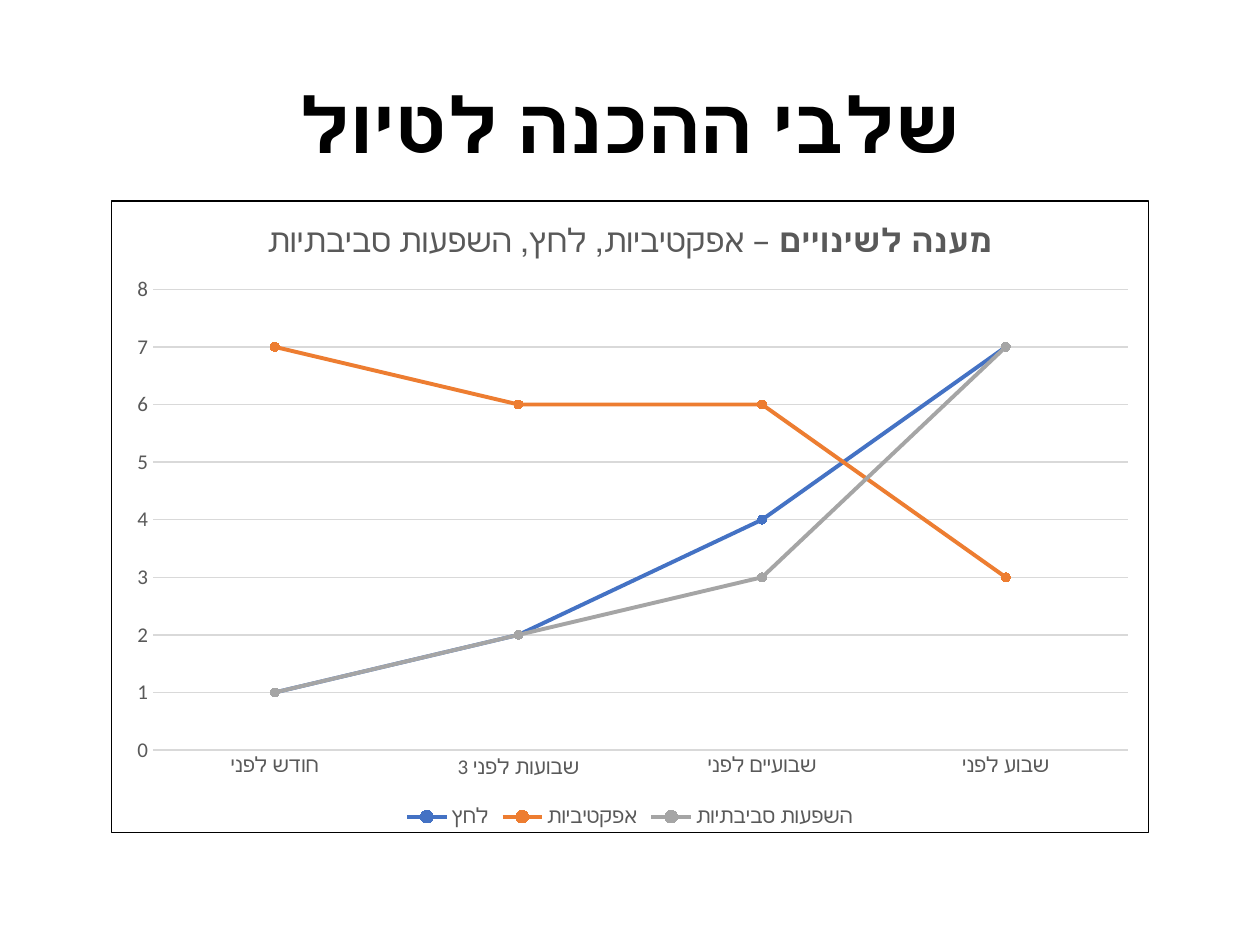
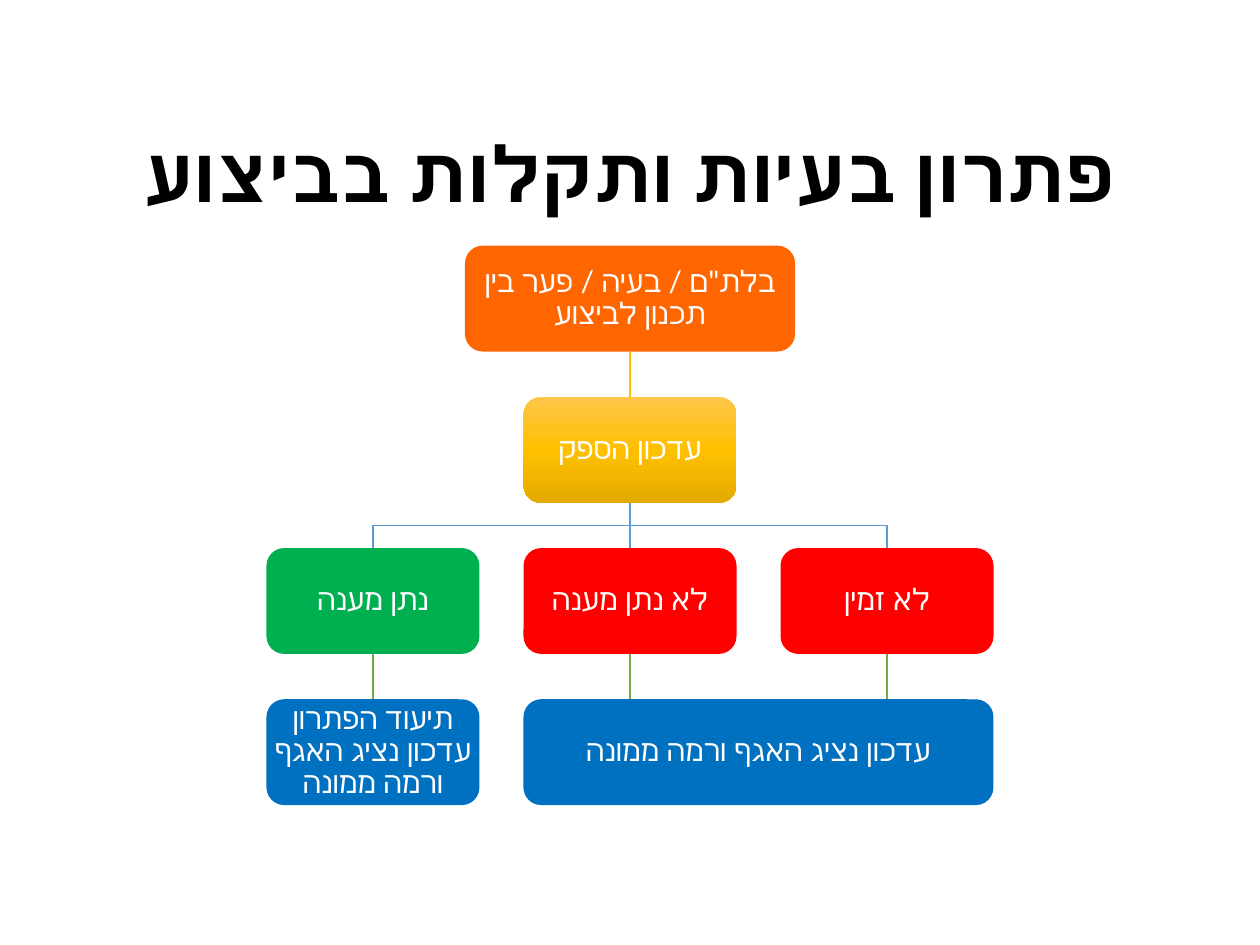
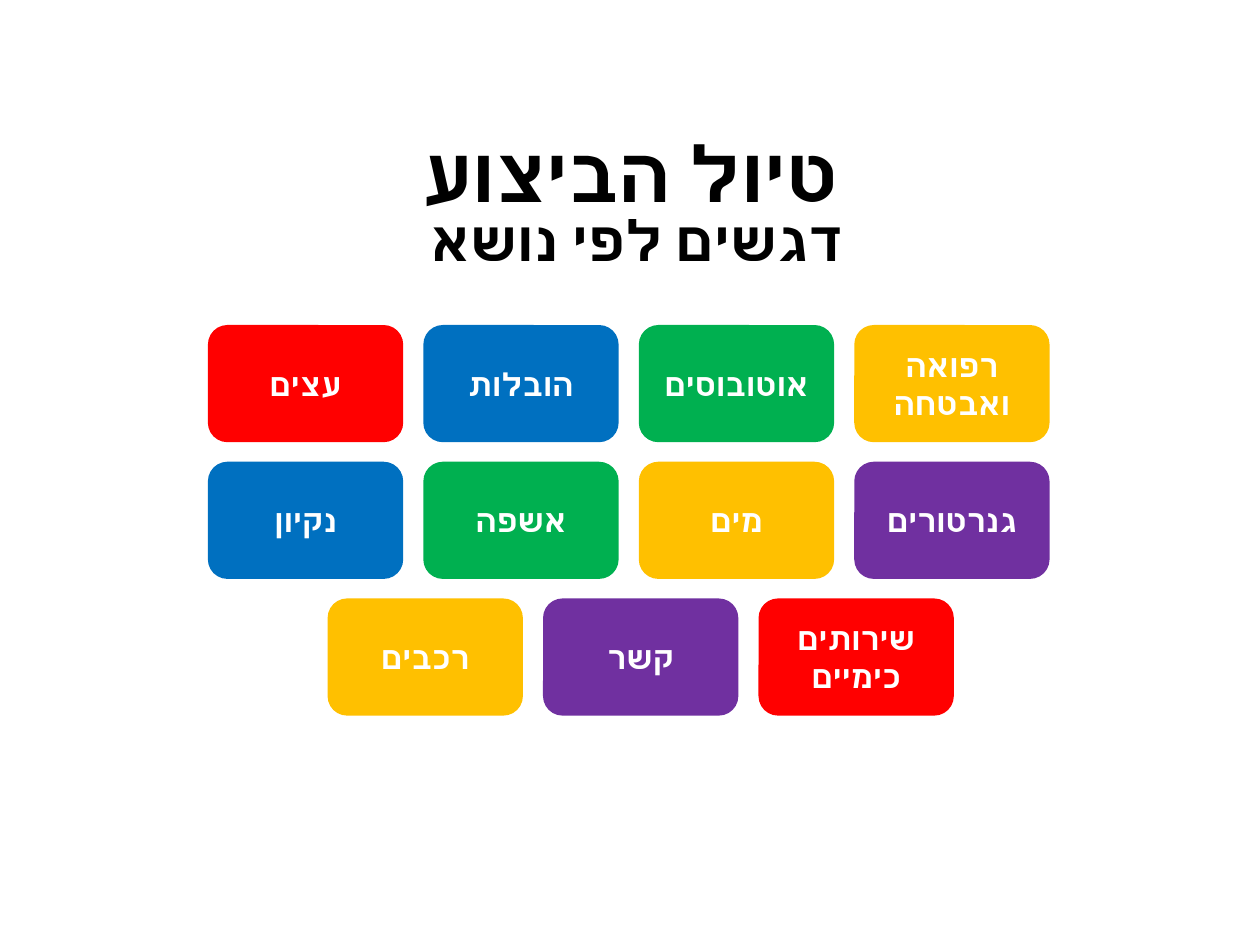
from copy import deepcopy

from lxml.etree import SubElement
from pptx import Presentation
from pptx.chart.data import CategoryChartData
from pptx.dml.color import RGBColor
from pptx.enum.chart import XL_CHART_TYPE as ChartType
from pptx.enum.chart import XL_LEGEND_POSITION as LegendPosition
from pptx.enum.chart import XL_MARKER_STYLE as MarkerStyle
from pptx.enum.chart import XL_TICK_MARK as TickMark
from pptx.enum.shapes import MSO_CONNECTOR as Connector
from pptx.enum.shapes import MSO_SHAPE as Preset
from pptx.enum.text import MSO_ANCHOR as Anchor
from pptx.enum.text import MSO_AUTO_SIZE as AutoSize
from pptx.enum.text import PP_ALIGN as Align
from pptx.oxml import parse_xml
from pptx.oxml.ns import nsdecls, qn
from pptx.util import Inches, Pt

COLORS = {
    "black": "000000", "white": "FFFFFF", "grey": "595959", "grid": "D9D9D9",
    "red": "FF0000", "blue": "0070C0", "green": "00B050", "gold": "FFC000",
    "light_gold": "FFC64B", "dark_gold": "E3AB00", "purple": "7030A0", "orange": "FF6600",
    "branch": "5B9BD5", "leaf": "70AD47",
    "stress": "4472C4", "effectiveness": "ED7D31", "environment": "A5A5A5",
}
FONT, CHART_FONT = "Lato", "Calibri"
WIDTH, HEIGHT = 10, 7.5
CENTER = WIDTH / 2

STEP_WIDTH, STEP_HEIGHT = 1.69, 0.84
STEP_PITCH_X, STEP_PITCH_Y, STEP_TOP = 2.04, 1.2, 1.95
TILE_WIDTH, TILE_HEIGHT = 1.55, 0.93
TILE_PITCH_X, TILE_PITCH_Y, TILE_TOP = 1.71, 1.085, 2.58

CATEGORIES = ["חודש לפני", "3 שבועות לפני", "שבועיים לפני", "שבוע לפני"]
SERIES = [
    ("לחץ", (1, 2, 4, 7), "stress"),
    ("אפקטיביות", (7, 6, 6, 3), "effectiveness"),
    ("השפעות סביבתיות", (1, 2, 3, 7), "environment"),
]
STEPS = [
    ("בלת\"ם / בעיה / פער בין תכנון לביצוע", 0, 0, 2.62, "orange"),
    ("עדכון הספק", 0, 1, STEP_WIDTH, "gold"),
    ("נתן מענה", -1, 2, STEP_WIDTH, "green"),
    ("לא נתן מענה", 0, 2, STEP_WIDTH, "red"),
    ("לא זמין", 1, 2, STEP_WIDTH, "red"),
    ("תיעוד הפתרון עדכון נציג האגף ורמה ממונה", -1, 3, STEP_WIDTH, "blue"),
    ("עדכון נציג האגף ורמה ממונה", 0.5, 3, STEP_WIDTH + STEP_PITCH_X, "blue"),
]
TILE_ROWS = [
    (1.65, [("עצים", "red"), ("הובלות", "blue"), ("אוטובוסים", "green"),
            ("רפואה ואבטחה", "gold")]),
    (1.65, [("נקיון", "blue"), ("אשפה", "green"), ("מים", "gold"), ("גנרטורים", "purple")]),
    (2.6, [("רכבים", "gold"), ("קשר", "purple"), ("שירותים כימיים", "red")]),
]


def rgb(name):
    """Return the named colour."""
    return RGBColor.from_string(COLORS[name])


def write(shape, text, size, color, bold=False, align=Align.CENTER, spacing=None):
    """Fill a shape with one right-to-left paragraph."""
    paragraph = shape.text_frame.paragraphs[0]
    paragraph.text = text
    paragraph.alignment = align
    if spacing:
        paragraph.line_spacing = spacing
    font = paragraph.font
    font.name, font.size, font.bold = FONT, Pt(size), bold
    font.color.rgb = rgb(color)
    properties = paragraph._p.get_or_add_pPr()
    properties.set("rtl", "1")
    SubElement(properties.find(qn("a:defRPr")), qn("a:cs"), typeface=FONT)


def add_titled_slide(presentation, title, top, width=9.38, height=1.08):
    """Add a title-only slide with a centred bold title."""
    slide = presentation.slides.add_slide(presentation.slide_layouts[5])
    shape = slide.shapes.title
    shape.left, shape.top = Inches((WIDTH - width) / 2), Inches(top)
    shape.width, shape.height = Inches(width), Inches(height)
    frame = shape.text_frame
    frame.auto_size, frame.word_wrap, frame.vertical_anchor = AutoSize.NONE, True, Anchor.TOP
    write(shape, title, 44, "black", bold=True)
    return slide


def add_box(slide, text, left, top, width, height, fill, size, inset, **style):
    """Add a rounded box with white text."""
    shape = slide.shapes.add_shape(Preset.ROUNDED_RECTANGLE, Inches(left), Inches(top),
                                   Inches(width), Inches(height))
    shape.shadow.inherit = False
    shape.fill.solid()
    shape.fill.fore_color.rgb = rgb(fill)
    shape.line.fill.background()
    frame = shape.text_frame
    frame.word_wrap, frame.vertical_anchor = True, Anchor.MIDDLE
    frame.margin_left = frame.margin_right = Inches(inset)
    frame.margin_top = frame.margin_bottom = Inches(inset)
    write(shape, text, size, "white", **style)
    return shape


def shade(shape, names):
    """Give a shape an even top-to-bottom gradient of three colours."""
    shape.fill.gradient()
    shape.fill.gradient_angle = 270
    stop_list = shape._element.spPr.find(f".//{qn('a:gsLst')}")
    stop_list.append(deepcopy(stop_list[-1]))
    for index, (stop, name) in enumerate(zip(shape.fill.gradient_stops, names)):
        stop.position = index / 2
        stop.color.rgb = rgb(name)


def column_center(column):
    """Return the centre of a flow column."""
    return CENTER + column * STEP_PITCH_X


def row_top(row):
    """Return the top of a flow row."""
    return STEP_TOP + row * STEP_PITCH_Y


def add_drop(slide, column, row, color):
    """Join a step to the one below it with a vertical line."""
    x = Inches(column_center(column))
    line = slide.shapes.add_connector(Connector.STRAIGHT, x, Inches(row_top(row) + STEP_HEIGHT),
                                      x, Inches(row_top(row + 1)))
    line.line.color.rgb, line.line.width = rgb(color), Pt(1)
    SubElement(line._element.spPr, qn("a:effectLst"))


def add_branch(slide, column, row, color):
    """Join the central step to a side step in the next row with an elbow."""
    start, end = row_top(row) + STEP_HEIGHT, row_top(row + 1)
    middle, x = (start + end) / 2, column_center(column)
    builder = slide.shapes.build_freeform(Inches(CENTER), Inches(start))
    points = [(CENTER, middle), (x, middle), (x, end)]
    builder.add_line_segments([(Inches(a), Inches(b)) for a, b in points], close=False)
    shape = builder.convert_to_shape()
    shape.shadow.inherit = False
    shape.fill.background()
    shape.line.color.rgb, shape.line.width = rgb(color), Pt(1)


def set_font(font, size, bold=False):
    """Apply the grey chart font."""
    font.name, font.size, font.bold = CHART_FONT, Pt(size), bold
    font.color.rgb = rgb("grey")


def add_chart_title(chart):
    """Write the chart title with a bold opening."""
    paragraph = chart.chart_title.text_frame.paragraphs[0]
    paragraph._p.get_or_add_pPr().set("rtl", "1")
    for text, bold in (("מענה לשינויים", True), (" – אפקטיביות, לחץ, השפעות סביבתיות", False)):
        run = paragraph.add_run()
        run.text = text
        set_font(run.font, 18.6, bold)
    chart.chart_title.include_in_layout = False


def frame_chart(chart, x, y, width, height):
    """Outline the chart and place its plot by shares of the chart's size."""
    chart_element = chart.element.find(qn("c:chart"))
    chart_element.addnext(parse_xml(
        f'<c:spPr {nsdecls("c", "a")}><a:noFill/><a:ln w="9525"><a:solidFill>'
        f'<a:srgbClr val="{COLORS["black"]}"/></a:solidFill></a:ln></c:spPr>'))
    plot_area = chart_element.find(qn("c:plotArea"))
    for old in plot_area.findall(qn("c:layout")):
        plot_area.remove(old)
    layout = parse_xml(f'<c:layout {nsdecls("c")}><c:manualLayout/></c:layout>')
    settings = {"layoutTarget": "inner", "xMode": "edge", "yMode": "edge",
                "x": x, "y": y, "w": width, "h": height}
    for tag, value in settings.items():
        SubElement(layout[0], qn(f"c:{tag}"), val=str(value))
    plot_area.insert(0, layout)


def add_line_chart(slide, left, top, width, height):
    """Add the line chart of preparation stages."""
    data = CategoryChartData()
    data.categories = CATEGORIES
    for name, values, _ in SERIES:
        data.add_series(name, values)
    chart = slide.shapes.add_chart(ChartType.LINE_MARKERS, Inches(left), Inches(top),
                                   Inches(width), Inches(height), data).chart
    set_font(chart.font, 12)
    add_chart_title(chart)
    chart.has_legend = True
    chart.legend.position = LegendPosition.BOTTOM
    chart.legend.include_in_layout = False
    set_font(chart.legend.font, 12)
    for axis in (chart.category_axis, chart.value_axis):
        axis.major_tick_mark = axis.minor_tick_mark = TickMark.NONE
        set_font(axis.tick_labels.font, 12)
    value_axis = chart.value_axis
    value_axis.minimum_scale, value_axis.maximum_scale, value_axis.major_unit = 0, 8, 1
    value_axis.format.line.fill.background()
    for line in (chart.category_axis.format.line, value_axis.major_gridlines.format.line):
        line.color.rgb, line.width = rgb("grid"), Pt(0.75)
    chart.plots[0].vary_by_categories = False
    for series, (_, _, color) in zip(chart.plots[0].series, SERIES):
        series.smooth = False
        series.format.line.color.rgb, series.format.line.width = rgb(color), Pt(2.25)
        marker = series.marker
        marker.style, marker.size = MarkerStyle.CIRCLE, 5
        marker.format.fill.solid()
        marker.format.fill.fore_color.rgb = rgb(color)
        marker.format.line.color.rgb = rgb(color)
    frame_chart(chart, 0.04, 0.14, 0.94, 0.73)


def build_stages(presentation):
    """Build the slide on the stages of preparation."""
    slide = add_titled_slide(presentation, "שלבי ההכנה לטיול", 0.56)
    add_line_chart(slide, 0.88, 1.59, 8.24, 5.02)


def build_problem_flow(presentation):
    """Build the slide on solving problems."""
    slide = add_titled_slide(presentation, "פתרון בעיות ותקלות בביצוע", 0.95)
    add_drop(slide, 0, 0, "gold")
    add_drop(slide, 0, 1, "branch")
    for column in (-1, 1):
        add_branch(slide, column, 1, "branch")
    for column in (-1, 0, 1):
        add_drop(slide, column, 2, "leaf")
    for text, column, row, width, color in STEPS:
        step = add_box(slide, text, column_center(column) - width / 2, row_top(row), width,
                       STEP_HEIGHT, color, 17, 0.01, spacing=0.9)
        if color == "gold":
            shade(step, ("light_gold", "gold", "dark_gold"))


def build_topics(presentation):
    """Build the slide of emphases by topic."""
    slide = add_titled_slide(presentation, "טיול הביצוע", 0.95, 4.38, 0.84)
    subtitle = slide.shapes.add_textbox(Inches(3.2), Inches(1.58), Inches(3.6), Inches(0.64))
    subtitle.text_frame.word_wrap = True
    write(subtitle, "דגשים לפי נושא", 32, "black", bold=True, align=Align.RIGHT)
    for row, (left, tiles) in enumerate(TILE_ROWS):
        for column, (text, color) in enumerate(tiles):
            add_box(slide, text, left + column * TILE_PITCH_X, TILE_TOP + row * TILE_PITCH_Y,
                    TILE_WIDTH, TILE_HEIGHT, color, 18, 0.05, bold=True)


def main():
    """Build and save the presentation."""
    presentation = Presentation()
    presentation.slide_width, presentation.slide_height = Inches(WIDTH), Inches(HEIGHT)
    build_stages(presentation)
    build_problem_flow(presentation)
    build_topics(presentation)
    presentation.save("out.pptx")


if __name__ == "__main__":
    main()
